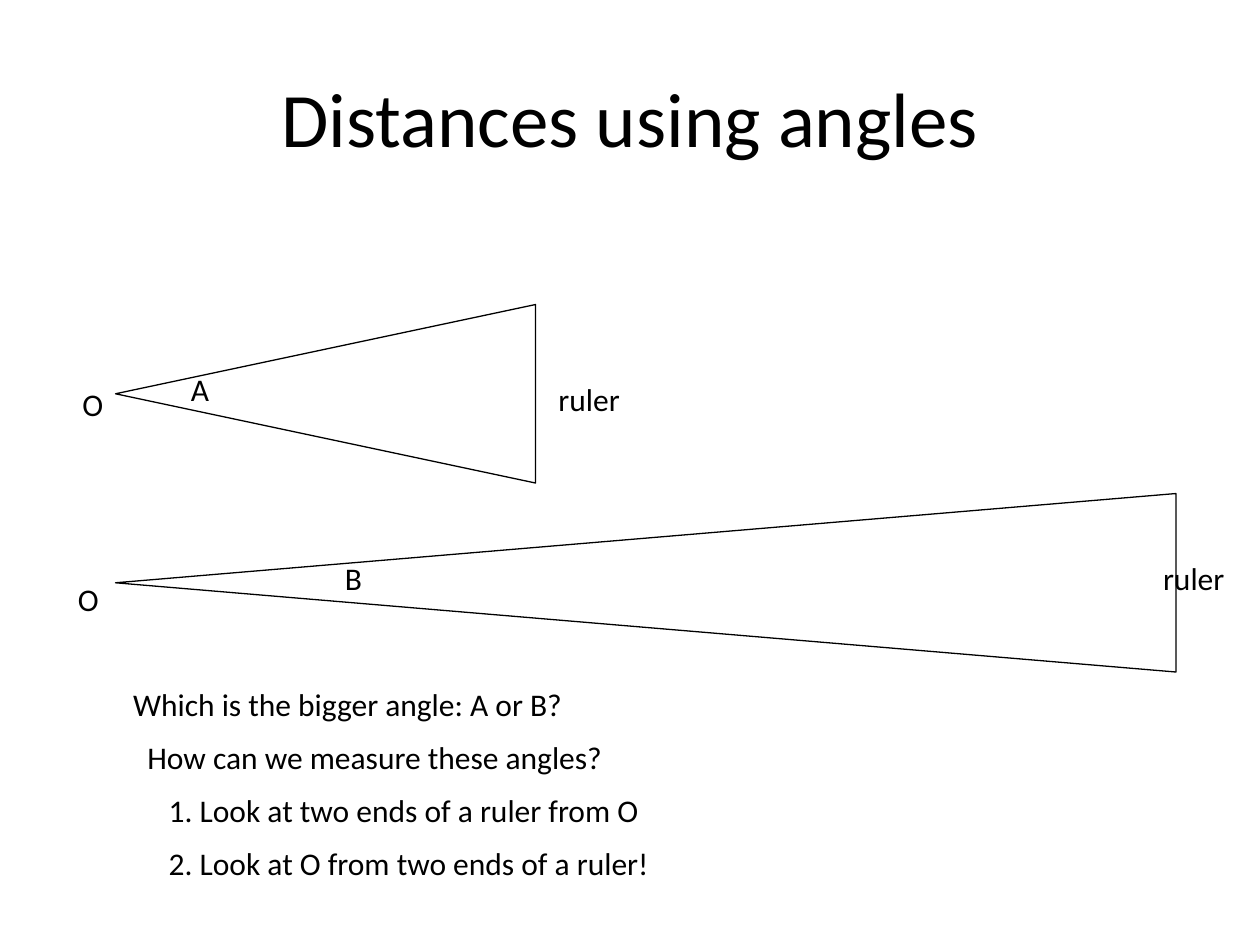
"""Build a slide comparing the angles a ruler makes at two distances."""
from dataclasses import dataclass

from pptx import Presentation
from pptx.dml.color import RGBColor
from pptx.enum.shapes import MSO_SHAPE as Shape
from pptx.enum.text import MSO_ANCHOR as Anchor, MSO_AUTO_SIZE as AutoSize, PP_ALIGN as Align
from pptx.util import Pt


@dataclass(frozen=True)
class Theme:
    font: str = "Calibri"
    ink: RGBColor = RGBColor(0, 0, 0)
    title_size: float = 44
    body_size: float = 18
    question_gap: float = 8.7
    line_width: float = 0.75


THEME = Theme()
TITLE = "Distances using angles"
TITLE_BOX = (36, 21.6, 648, 90)
APEX_X = 66
RULER_LENGTH = 102
SIGHTINGS = [
    {"axis_y": 225, "distance": 240},
    {"axis_y": 333, "distance": 606},
]
LABEL_HEIGHT = 36
LABELS = [
    ("A", 102, 204, 30),
    ("B", 190, 312, 30),
    ("O", 40, 213, 33),
    ("O", 37.5, 324, 33),
    ("ruler", 312, 210, 63),
    ("ruler", 657.5, 312, 63),
]
QUESTIONS_BOX = (69, 384, 317, 127.4)
QUESTIONS = [
    ("Which is the bigger angle: A or B?", 0),
    ("How can we measure these angles?", 8.1),
    ("1. Look at two ends of a ruler from O", 20.3),
    ("2. Look at O from two ends of a ruler!", 20.3),
]


def style(paragraph, size):
    paragraph.font.name = THEME.font
    paragraph.font.size = Pt(size)
    paragraph.font.color.rgb = THEME.ink


def add_sighting(slide, axis_y, distance):
    left = APEX_X + (distance - RULER_LENGTH) / 2
    top = axis_y - distance / 2
    triangle = slide.shapes.add_shape(
        Shape.ISOSCELES_TRIANGLE, Pt(left), Pt(top), Pt(RULER_LENGTH), Pt(distance))
    triangle.rotation = 270
    triangle.shadow.inherit = False
    triangle.fill.background()
    triangle.line.color.rgb = THEME.ink
    triangle.line.width = Pt(THEME.line_width)


def add_text(slide, box, lines):
    frame = slide.shapes.add_textbox(*map(Pt, box)).text_frame
    frame.word_wrap = False
    frame.auto_size = AutoSize.SHAPE_TO_FIT_TEXT
    frame.vertical_anchor = Anchor.MIDDLE
    frame.text = "\n".join(text for text, _ in lines)
    for index, (paragraph, (_, indent)) in enumerate(zip(frame.paragraphs, lines)):
        style(paragraph, THEME.body_size)
        if index:
            paragraph.space_before = Pt(THEME.question_gap)
        if indent:
            paragraph._p.get_or_add_pPr().set("marL", str(Pt(indent)))


def main():
    deck = Presentation()
    deck.slide_width, deck.slide_height = Pt(720), Pt(540)
    slide = deck.slides.add_slide(deck.slide_layouts[5])

    title = slide.shapes.title
    title.left, title.top, title.width, title.height = map(Pt, TITLE_BOX)
    title.text_frame.text = TITLE
    title.text_frame.vertical_anchor = Anchor.MIDDLE
    heading = title.text_frame.paragraphs[0]
    heading.alignment = Align.CENTER
    style(heading, THEME.title_size)

    for sighting in SIGHTINGS:
        add_sighting(slide, **sighting)
    for label, left, top, width in LABELS:
        add_text(slide, (left, top, width, LABEL_HEIGHT), [(label, 0)])
    add_text(slide, QUESTIONS_BOX, QUESTIONS)

    deck.save("out.pptx")


if __name__ == "__main__":
    main()
